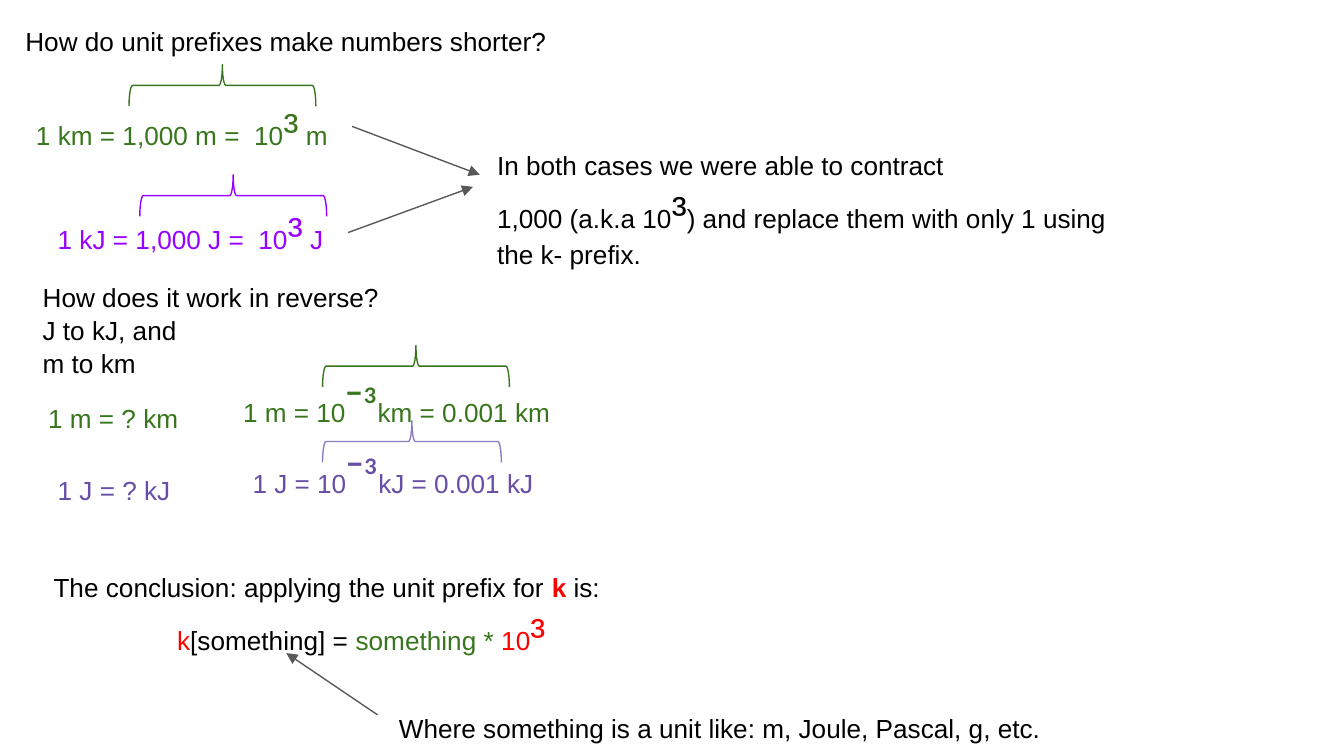
from dataclasses import dataclass
from typing import Optional

from lxml.etree import SubElement
from pptx import Presentation
from pptx.dml.color import RGBColor
from pptx.enum.shapes import MSO_CONNECTOR, MSO_SHAPE
from pptx.oxml.ns import qn
from pptx.util import Pt

BLACK = RGBColor(0x00, 0x00, 0x00)
GREEN = RGBColor(0x38, 0x76, 0x1D)
VIOLET = RGBColor(0x99, 0x00, 0xFF)
PURPLE = RGBColor(0x67, 0x4E, 0xA7)
LILAC = RGBColor(0x8E, 0x7C, 0xC3)
RED = RGBColor(0xFF, 0x00, 0x00)
GREY = RGBColor(0x59, 0x59, 0x59)

BODY_SIZE = 14
POWER_SIZE = 24
LINE_WIDTH = 0.75
BRACE_DEPTH = 22.3


@dataclass
class Span:
    text: str
    color: Optional[RGBColor] = None
    size: Optional[float] = None
    font: Optional[str] = None
    bold: Optional[bool] = None


CUBE = Span("³", size=POWER_SIZE)
RED_CUBE = Span("³", RED, POWER_SIZE)
MINUS_CUBE = Span("ˉ³", size=POWER_SIZE, font="Calibri")


def add_spans(para, spans, color):
    """Set the paragraph's font, then add spans that override it where needed."""
    para.line_spacing = 1.05
    para.font.name = "Arial"
    para.font.size = Pt(BODY_SIZE)
    para.font.color.rgb = color
    for span in spans:
        run = para.add_run()
        run.text = span.text
        run.font.name = span.font or "Arial"
        run.font.size = Pt(span.size or BODY_SIZE)
        run.font.color.rgb = span.color or color
        run.font.bold = span.bold


def add_text(page, left, top, width, height, *lines, color=BLACK):
    """Add a text box; each line is a list of spans."""
    box = page.shapes.add_textbox(Pt(left), Pt(top), Pt(width), Pt(height))
    frame = box.text_frame
    frame.word_wrap = True
    frame.margin_left = frame.margin_right = Pt(7.2)
    frame.margin_top = frame.margin_bottom = Pt(7.2)
    for index, spans in enumerate(lines):
        para = frame.add_paragraph() if index else frame.paragraphs[0]
        add_spans(para, spans, color)
    return box


def indent(para, distance):
    properties = para._p.get_or_add_pPr()
    properties.set("marL", str(Pt(distance)))
    properties.set("indent", "0")


def add_brace(page, left, top, span_width, color):
    """Add an upward-pointing brace whose visible corner is left, top."""
    shift = (span_width - BRACE_DEPTH) / 2
    brace = page.shapes.add_shape(
        MSO_SHAPE.RIGHT_BRACE,
        Pt(left + shift), Pt(top - shift), Pt(BRACE_DEPTH), Pt(span_width),
    )
    brace.rotation = 270
    brace.shadow.inherit = False
    brace.fill.background()
    brace.line.color.rgb = color
    brace.line.width = Pt(LINE_WIDTH)


def add_arrow(page, start_x, start_y, end_x, end_y):
    arrow = page.shapes.add_connector(
        MSO_CONNECTOR.STRAIGHT, Pt(start_x), Pt(start_y), Pt(end_x), Pt(end_y)
    )
    arrow.line.color.rgb = GREY
    arrow.line.width = Pt(LINE_WIDTH)
    SubElement(arrow.line._get_or_add_ln(), qn("a:tailEnd"), type="triangle")
    SubElement(arrow._element.spPr, qn("a:effectLst"))


def add_shortening(page):
    add_text(page, 6.5, 5.8, 368.6, 33.8,
             [Span("How do unit prefixes make numbers shorter?")])
    add_text(page, 12.2, 45.4, 190.8, 49,
             [Span("1 km = 1,000 m =  10"), CUBE, Span(" m")], color=GREEN)
    add_text(page, 23.8, 100.8, 190.8, 49,
             [Span("1 kJ = 1,000 J =  10"), CUBE, Span(" J")], color=VIOLET)
    add_arrow(page, 188.6, 67.7, 257, 93.6)
    add_arrow(page, 186.5, 124.6, 253.4, 100.1)
    add_text(page, 259.2, 72, 357.8, 43.2,
             [Span("In both cases we were able to contract")],
             [Span("1,000 (a.k.a 10"), CUBE,
              Span(") and replace them with only 1 using the k- prefix.")])
    add_brace(page, 69.1, 34.6, 100.1, GREEN)
    add_brace(page, 74.9, 93.6, 100.1, VIOLET)


def add_reverse(page):
    add_text(page, 15.8, 142.6, 280, 64.8,
             [Span("How does it work in reverse?")],
             [Span("J to kJ, and")], [Span("m to km")])
    add_text(page, 18.7, 207.4, 93.6, 49, [Span("1 m = ? km")], color=GREEN)
    add_text(page, 123.1, 193.7, 257.8, 49,
             [Span("1 m = 10"), MINUS_CUBE, Span("km = 0.001 km")], color=GREEN)
    add_text(page, 23.8, 246.2, 93.6, 49, [Span("1 J = ? kJ")], color=PURPLE)
    add_text(page, 128.2, 231.8, 221, 49,
             [Span("1 J = 10"), MINUS_CUBE, Span("kJ = 0.001 kJ")], color=PURPLE)
    add_brace(page, 172.8, 185, 100.1, GREEN)
    add_brace(page, 172.8, 225.4, 95.8, LILAC)


def add_conclusion(page):
    conclusion = add_text(
        page, 21.6, 298.1, 649.4, 54,
        [Span("The conclusion: applying the unit prefix for "),
         Span("k", RED, bold=True), Span(" is:")],
        [Span("k", RED), Span("[something] = "),
         Span("something * ", GREEN), Span("10", RED), RED_CUBE],
    )
    indent(conclusion.text_frame.paragraphs[1], 66.2)
    add_arrow(page, 202.3, 383, 153.4, 349.9)
    add_text(page, 206.6, 373.7, 498.2, 31.7,
             [Span("Where something is a unit like: m, Joule, Pascal, g, etc.")])


def main():
    deck = Presentation()
    deck.slide_width = Pt(720)
    deck.slide_height = Pt(405)
    page = deck.slides.add_slide(deck.slide_layouts[6])
    add_shortening(page)
    add_reverse(page)
    add_conclusion(page)
    deck.save("out.pptx")


if __name__ == "__main__":
    main()
